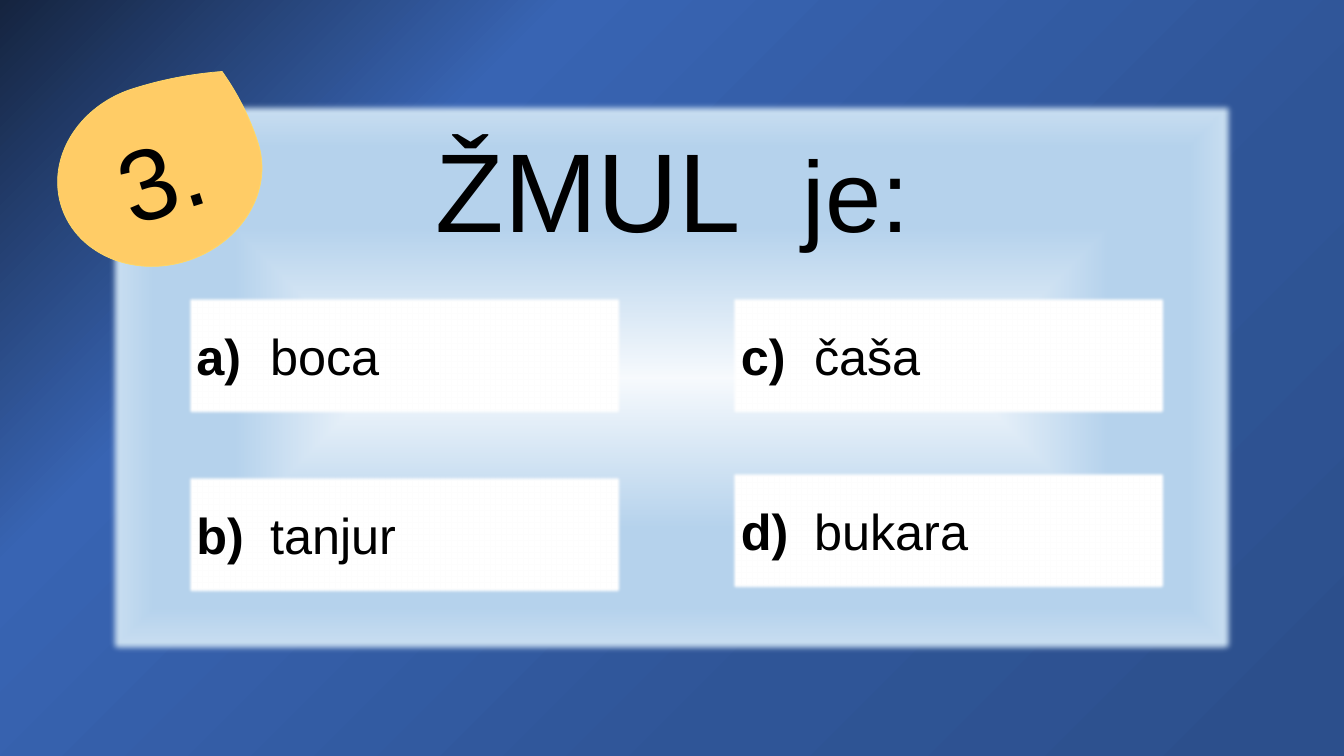
from dataclasses import dataclass
from typing import Any, NamedTuple

import lxml.etree
import pptx
import pptx.dml.color
import pptx.enum.shapes
import pptx.enum.text
import pptx.oxml.ns
import pptx.util

Inches = pptx.util.Inches
Pt = pptx.util.Pt
Align = pptx.enum.text.PP_ALIGN
Anchor = pptx.enum.text.MSO_ANCHOR
Form = pptx.enum.shapes.MSO_SHAPE
qn = pptx.oxml.ns.qn


class Stop(NamedTuple):
    place: int
    color: str


class Box(NamedTuple):
    left: float
    top: float
    width: float
    height: float


class Option(NamedTuple):
    label: str
    word: str
    left: float
    top: float


@dataclass(frozen=True)
class Theme:
    font: str = "Arial"
    ink: str = "000000"
    card: str = "FFFFFF"
    badge: str = "FFCC66"
    rim: str = "FFD966"
    back: tuple[Stop, ...] = (
        Stop(0, "15243F"), Stop(27, "3864B3"), Stop(69, "2F5597"), Stop(97, "2C4F8C"))
    panel: tuple[Stop, ...] = (
        Stop(0, "F7FAFD"), Stop(54, "B5D2EC"), Stop(83, "B5D2EC"), Stop(100, "CEE1F2"))
    head: int = 80
    large: int = 72
    body: int = 36


THEME = Theme()
PANEL = Box(1.07, 1, 11.2, 5.5)
TITLE = Box(1.07, 1.2, 11.2, 1.28)
BADGE = Box(0.56, 0.84, 2.05, 1.79)
LEFT, RIGHT = 1.85, 7.25
CARD_W, CARD_H = 4.32, 1.19
INDENT = 0.73
OPTIONS = (
    Option("a)", "boca", LEFT, 2.93),
    Option("c)", "čaša", RIGHT, 2.93),
    Option("b)", "tanjur", LEFT, 4.71),
    Option("d)", "bukara", RIGHT, 4.67),
)


def tint(color: str) -> pptx.dml.color.RGBColor:
    return pptx.dml.color.RGBColor.from_string(color)


def node(parent: Any, tag: str, **attrs: Any) -> Any:
    return lxml.etree.SubElement(parent, qn(tag), {k: str(v) for k, v in attrs.items()})


def blend(owner: Any, stops: tuple[Stop, ...], angle: int | None = None) -> None:
    solid = owner.find(qn("a:solidFill"))
    grad = lxml.etree.Element(qn("a:gradFill"), rotWithShape="1")
    items = node(grad, "a:gsLst")
    for stop in stops:
        node(node(items, "a:gs", pos=stop.place * 1000), "a:srgbClr", val=stop.color)
    if angle is None:
        center = node(grad, "a:path", path="shape")
        node(center, "a:fillToRect", l=50000, t=50000, r=50000, b=50000)
    else:
        node(grad, "a:lin", ang=angle * 60000, scaled=0)
    owner.replace(solid, grad)


def place(shape: Any, box: Box) -> None:
    shape.left, shape.top, shape.width, shape.height = map(Inches, box)


def draw(slide: Any, form: Any, box: Box, color: str, soft: float = 0) -> Any:
    shape = slide.shapes.add_shape(form, *map(Inches, box))
    shape.shadow.inherit = False
    shape.fill.solid()
    shape.fill.fore_color.rgb = tint(color)
    shape.line.fill.background()
    if soft:
        effects = shape._element.spPr.find(qn("a:effectLst"))
        node(effects, "a:softEdge", rad=int(Pt(soft)))
    return shape


def write(para: Any, text: str, *, size: int, bold: bool = False, track: int = 0) -> None:
    run = para.add_run()
    run.text = text
    run.font.name = THEME.font
    run.font.size = Pt(size)
    run.font.bold = bold
    run.font.color.rgb = tint(THEME.ink)
    if track:
        run._r.get_or_add_rPr().set("spc", str(track * 100))


def begin(shape: Any, align: Any, anchor: Any = Anchor.MIDDLE) -> Any:
    frame = shape.text_frame
    frame.word_wrap = True
    frame.auto_size = pptx.enum.text.MSO_AUTO_SIZE.NONE
    frame.vertical_anchor = anchor
    para = frame.paragraphs[0]
    para.alignment = align
    return para


def add_title(slide: Any) -> None:
    panel = draw(slide, Form.RECTANGLE, PANEL, THEME.card, soft=5)
    blend(panel._element.spPr, THEME.panel)
    title = slide.shapes.title
    place(title, TITLE)
    panel._element.addnext(title._element)
    para = begin(title, Align.CENTER, Anchor.TOP)
    title.text_frame.margin_top = title.text_frame.margin_bottom = 0
    write(para, "ŽMUL", size=THEME.head)
    write(para, " ", size=THEME.head, track=22)
    write(para, "je:", size=THEME.large)


def add_card(slide: Any, option: Option) -> None:
    box = Box(option.left, option.top, CARD_W, CARD_H)
    para = begin(draw(slide, Form.RECTANGLE, box, THEME.card, soft=2.5), Align.LEFT)
    props = para._p.get_or_add_pPr()
    props.set("marL", str(Inches(INDENT)))
    props.set("indent", str(-Inches(INDENT)))
    write(para, f"{option.label}\t", size=THEME.body, bold=True)
    write(para, option.word, size=THEME.body)


def add_badge(slide: Any) -> None:
    badge = draw(slide, Form.TEAR, BADGE, THEME.badge)
    badge.adjustments[0] = 0.88
    badge.rotation = 342.2
    badge.line.color.rgb = tint(THEME.rim)
    badge.line.width = Pt(0.5)
    write(begin(badge, Align.CENTER), "3.", size=THEME.large)


def main() -> None:
    deck = pptx.Presentation()
    deck.slide_width, deck.slide_height = Inches(13.33), Inches(7.5)
    slide = deck.slides.add_slide(deck.slide_layouts.get_by_name("Title Only"))
    slide.background.fill.solid()
    slide.background.fill.fore_color.rgb = tint(THEME.back[0].color)
    blend(slide._element.find(f".//{qn('p:bgPr')}"), THEME.back, angle=45)
    add_title(slide)
    for option in OPTIONS:
        add_card(slide, option)
    add_badge(slide)
    deck.save("out.pptx")


if __name__ == "__main__":
    main()
